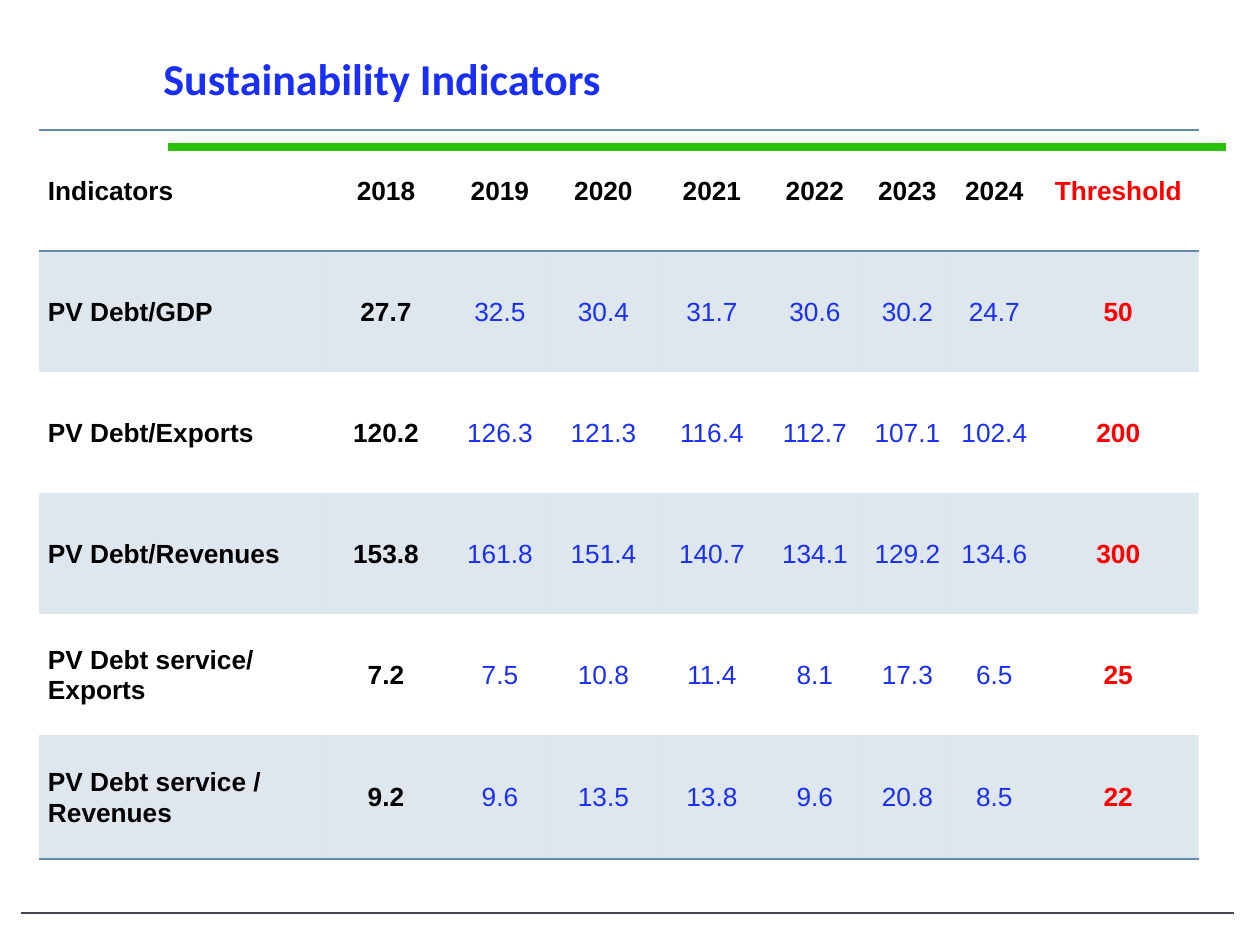
"""Build the Sustainability Indicators slide."""
import pptx
import pptx.dml.color
import pptx.enum.shapes
import pptx.enum.text
import pptx.oxml
import pptx.oxml.ns
import pptx.util

TITLE = "Sustainability Indicators"
ROWS = [
    ("Indicators", "2018", "2019", "2020", "2021", "2022", "2023", "2024", "Threshold"),
    ("PV Debt/GDP", "27.7", "32.5", "30.4", "31.7", "30.6", "30.2", "24.7", "50"),
    ("PV Debt/Exports", "120.2", "126.3", "121.3", "116.4", "112.7", "107.1", "102.4", "200"),
    ("PV Debt/Revenues", "153.8", "161.8", "151.4", "140.7", "134.1", "129.2", "134.6", "300"),
    ("PV Debt service/ Exports", "7.2", "7.5", "10.8", "11.4", "8.1", "17.3", "6.5", "25"),
    ("PV Debt service / Revenues", "9.2", "9.6", "13.5", "13.8", "9.6", "20.8", "8.5", "22"),
]
COL_WIDTHS = [282, 130, 98, 109, 108, 98, 87, 87, 161]
ROW_HEIGHTS = [121] * 5 + [124]
RULES = [(21, 913, 1234, "footer", 0.75), (168, 147, 1226, "green", 4.5)]
COLORS = {"title": "192EF7", "value": "192EF7", "label": "000000", "limit": "FF0000",
          "steel": "638BAD", "green": "29C000", "footer": "464653"}
BAND_ALPHA = 20
ALIGN = pptx.enum.text.PP_ALIGN
ANCHOR = pptx.enum.text.MSO_ANCHOR


def px(n):
    return pptx.util.Emu(round(n * 914400 / 126))


def rgb(name):
    return pptx.dml.color.RGBColor.from_string(COLORS[name])


def write(tf, text, size, color, font="Arial", bold=False, align=ALIGN.LEFT, spacing=1.0):
    p = tf.paragraphs[0]
    p.alignment = align
    p.line_spacing = spacing
    r = p.add_run()
    r.text = text
    r.font.name = font
    r.font.size = pptx.util.Pt(size)
    r.font.bold = bold
    r.font.color.rgb = rgb(color)


def add_rule(s, left, top, right, color, width):
    line = s.shapes.add_connector(pptx.enum.shapes.MSO_CONNECTOR.STRAIGHT,
                                  px(left), px(top), px(right), px(top))
    line.line.color.rgb = rgb(color)
    line.line.width = pptx.util.Pt(width)
    line._element.spPr.append(pptx.oxml.parse_xml(
        f"<a:effectLst {pptx.oxml.ns.nsdecls('a')}/>"))


def set_borders(cell, sides):
    tcPr = cell._tc.get_or_add_tcPr()
    for i, side in enumerate("LRTB"):
        fill = "<a:noFill/>"
        if side in sides:
            fill = f'<a:solidFill><a:srgbClr val="{COLORS["steel"]}"/></a:solidFill>'
        tcPr.insert(i, pptx.oxml.parse_xml(
            f'<a:ln{side} {pptx.oxml.ns.nsdecls("a")} w="12700">{fill}</a:ln{side}>'))


def fill_band(cell):
    cell.fill.solid()
    cell.fill.fore_color.rgb = rgb("steel")
    color = cell._tc.tcPr.find(".//" + pptx.oxml.ns.qn("a:srgbClr"))
    color.append(pptx.oxml.parse_xml(
        f'<a:alpha {pptx.oxml.ns.nsdecls("a")} val="{BAND_ALPHA * 1000}"/>'))


def add_indicators(s):
    table = s.shapes.add_table(len(ROWS), len(COL_WIDTHS), px(39), px(130),
                               px(sum(COL_WIDTHS)), px(sum(ROW_HEIGHTS))).table
    table.first_row = table.horz_banding = False
    for column, width in zip(table.columns, COL_WIDTHS):
        column.width = px(width)
    last_row, last_col = len(ROWS) - 1, len(COL_WIDTHS) - 1
    for i, row in enumerate(ROWS):
        table.rows[i].height = px(ROW_HEIGHTS[i])
        sides = ("T" if i < 2 else "") + ("B" if i in (0, last_row) else "")
        for j, text in enumerate(row):
            cell = table.cell(i, j)
            cell.margin_left = cell.margin_right = px(9)
            cell.margin_top = cell.margin_bottom = 0
            cell.vertical_anchor = ANCHOR.MIDDLE
            color = "limit" if j == last_col else "label" if i == 0 or j < 2 else "value"
            write(cell.text_frame, text, 15, color, bold=color != "value",
                  align=ALIGN.CENTER if j else ALIGN.LEFT, spacing=1.05)
            if i % 2:
                fill_band(cell)
            else:
                cell.fill.background()
            set_borders(cell, sides)


def main():
    prs = pptx.Presentation()
    prs.slide_width, prs.slide_height = px(1260), px(945)
    s = prs.slides.add_slide(prs.slide_layouts[6])
    for rule in RULES:
        add_rule(s, *rule)
    tf = s.shapes.add_textbox(px(151), px(50), px(1080), px(61)).text_frame
    tf.word_wrap = True
    tf.vertical_anchor = ANCHOR.BOTTOM
    write(tf, TITLE, 25.2, "title", font="Calibri", bold=True)
    add_indicators(s)
    prs.save("out.pptx")


if __name__ == "__main__":
    main()
